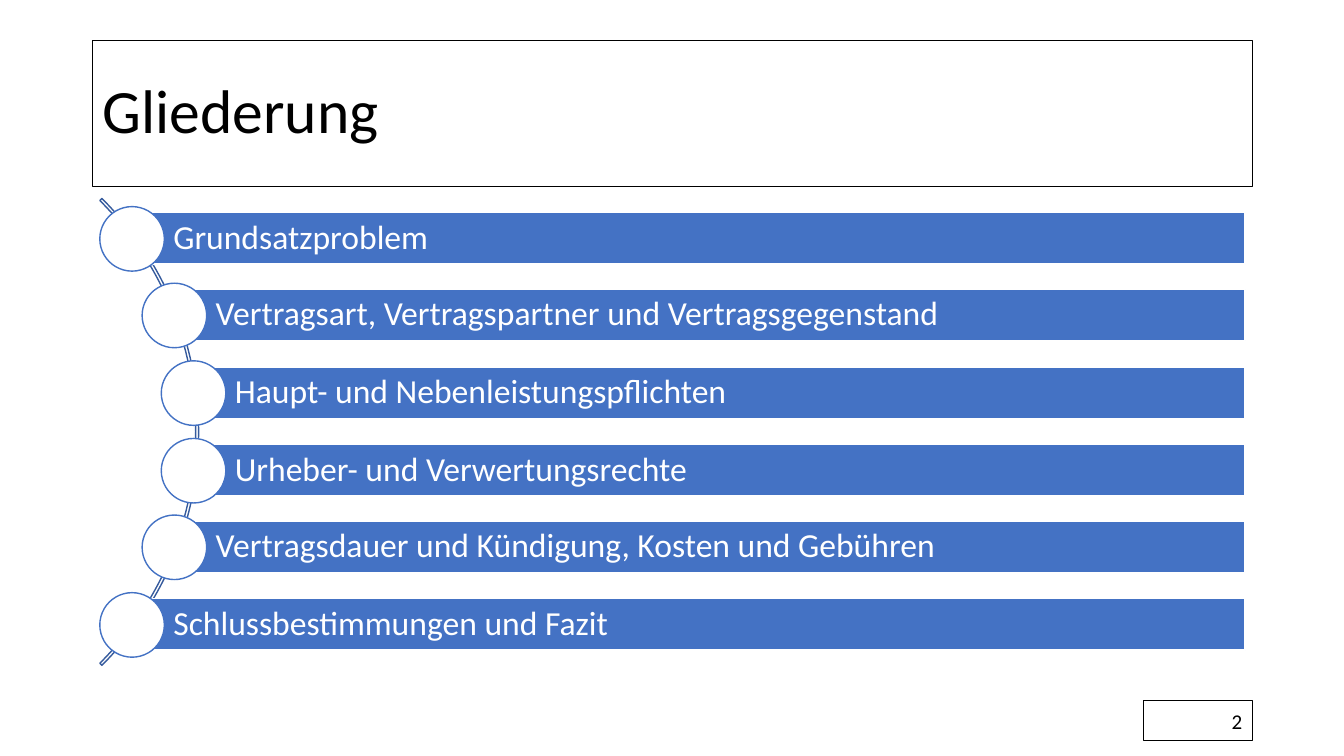
from lxml.etree import SubElement as Sub
from pptx import Presentation
from pptx.dml.color import RGBColor as RGB
from pptx.enum.shapes import MSO_SHAPE as Kind
from pptx.enum.text import MSO_ANCHOR as Anchor, MSO_AUTO_SIZE as Fit, PP_ALIGN as Align
from pptx.oxml.ns import qn
from pptx.util import Pt

PX = 9144
WHITE = RGB(0xFF, 0xFF, 0xFF)
BLACK = RGB(0x00, 0x00, 0x00)
BLUE = RGB(0x44, 0x72, 0xC4)
NAVY = RGB(0x36, 0x5B, 0x9D)

ITEMS = [
    (131, "Grundsatzproblem"),
    (173, "Vertragsart, Vertragspartner und Vertragsgegenstand"),
    (192, "Haupt- und Nebenleistungspflichten"),
    (192, "Urheber- und Verwertungsrechte"),
    (173, "Vertragsdauer und Kündigung, Kosten und Gebühren"),
    (131, "Schlussbestimmungen und Fazit"),
]
TOP, RIGHT, BAR, DOT = 211, 1235, 51, 64


class Deck:
    """Holds the style and the current slide, and draws each kind of element."""

    font = "Calibri"

    def __init__(self, width, height):
        self.prs = Presentation()
        self.prs.slide_width, self.prs.slide_height = width * PX, height * PX
        self.slide = self.prs.slides.add_slide(self.prs.slide_layouts[5])
        self.host = self.slide.shapes

    def paint(self, shape, fill, line, width=1, alpha=None):
        if fill is None:
            shape.fill.background()
        else:
            shape.fill.solid()
            shape.fill.fore_color.rgb = fill
        if alpha:
            tone = shape.element.spPr.find(qn("a:solidFill")).find(qn("a:srgbClr"))
            Sub(tone, qn("a:alpha"), val=str(alpha * 1000))
        shape.line.color.rgb = line
        shape.line.width = Pt(width)

    def label(self, shape, text, size, color, align=Align.LEFT, pad=(10, 5, 10, 5), lead=0.9):
        frame = shape.text_frame
        frame.word_wrap = True
        frame.auto_size = Fit.NONE
        frame.vertical_anchor = Anchor.MIDDLE
        (frame.margin_left, frame.margin_top,
         frame.margin_right, frame.margin_bottom) = (p * PX for p in pad)
        para = frame.paragraphs[0]
        para.alignment = align
        para.line_spacing = lead
        run = para.add_run()
        run.text = text
        run.font.name = self.font
        run.font.size = Pt(size)
        run.font.color.rgb = color

    def title(self, text, *box):
        shape = self.slide.shapes.title
        shape.left, shape.top, shape.width, shape.height = (v * PX for v in box)
        self.paint(shape, WHITE, BLACK, alpha=75)
        self.label(shape, text, 44, BLACK)

    def shape(self, kind, box, fill, line, width=1, alpha=None):
        shape = self.host.add_shape(kind, *(v * PX for v in box))
        shape.shadow.inherit = False
        self.paint(shape, fill, line, width, alpha)
        return shape

    def number(self, text, *box):
        shape = self.shape(Kind.RECTANGLE, box, WHITE, BLACK, 0.75, 75)
        self.label(shape, text, 15, BLACK, Align.RIGHT, lead=1.0)

    def group(self):
        self.host = self.slide.shapes.add_group_shape().shapes

    def arc(self, *box):
        shape = self.shape(Kind.BLOCK_ARC, box, None, NAVY)
        for i, value in enumerate((189, 27, 0.0044)):
            shape.adjustments[i] = value

    def item(self, text, left, top):
        box = left, top, RIGHT - left, BAR
        bar = self.shape(Kind.RECTANGLE, box, BLUE, WHITE)
        self.label(bar, text, 24, WHITE, pad=(41, 7, 7, 7))
        dot = left - DOT // 2, top - (DOT - BAR) // 2, DOT, DOT
        self.shape(Kind.OVAL, dot, WHITE, BLUE)


def main():
    deck = Deck(1333, 750)
    deck.title("Gliederung", 92, 40, 1150, 145)
    deck.number("2", 1134, 695, 108, 40)
    deck.group()
    deck.arc(-458, 101, 655, 655)
    for i, (left, text) in enumerate(ITEMS):
        deck.item(text, left, TOP + i * 230 // 3)
    deck.prs.save("out.pptx")


if __name__ == "__main__":
    main()
